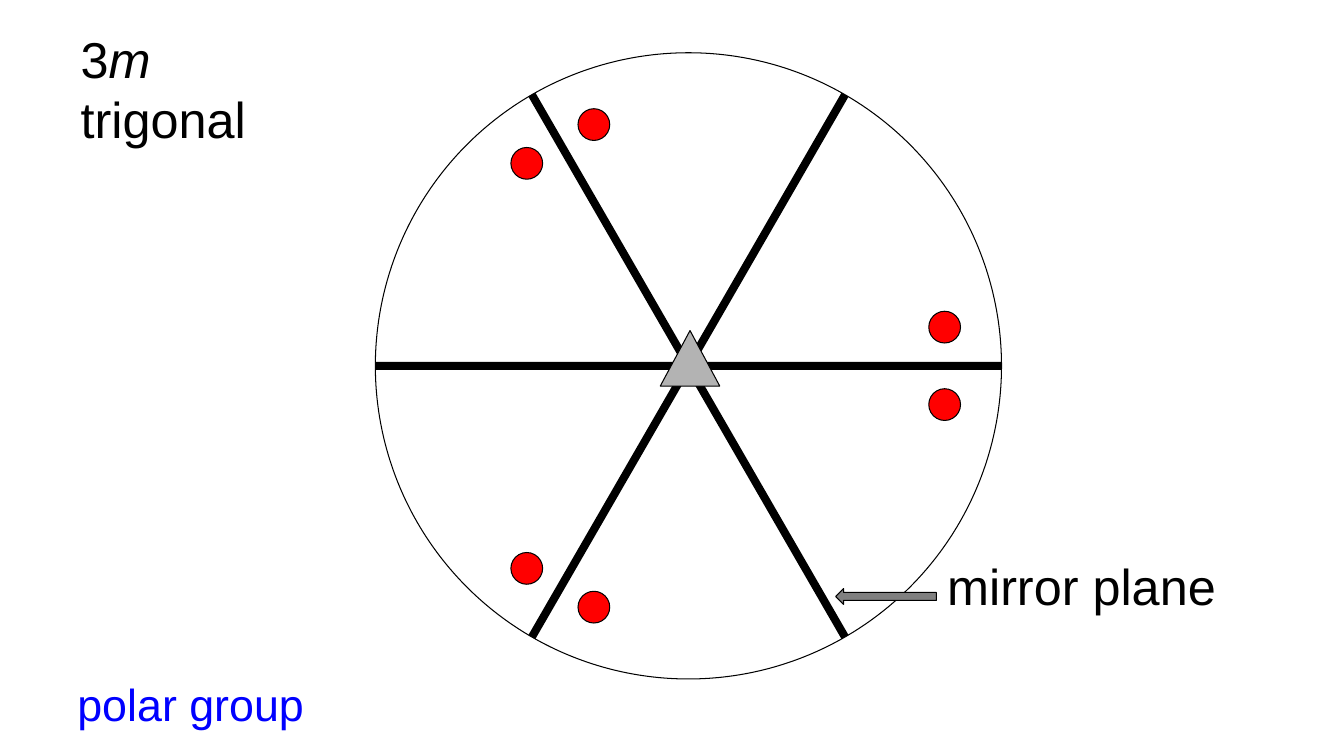
from math import cos, radians, sin

from lxml.etree import SubElement
from pptx import Presentation
from pptx.dml.color import RGBColor
from pptx.enum.shapes import MSO_CONNECTOR, MSO_SHAPE
from pptx.enum.text import MSO_ANCHOR, MSO_AUTO_SIZE, PP_ALIGN
from pptx.oxml.ns import qn
from pptx.util import Cm, Pt

COLORS = {
    "black": "000000",
    "white": "FFFFFF",
    "blue": "0000FF",
    "red": "FF0000",
    "light": "B3B3B3",
    "gray": "808080",
}
MID_X, MID_Y = 17.35, 9.22
RADIUS = 7.89
DOT_RING = 6.53
DOT_SIZE = 0.8
DOT_TILT = 8.6


def color(name):
    return RGBColor.from_string(COLORS[name])


def polar(radius, angle):
    """Return the point at an angle, counted anticlockwise from the right."""
    turn = radians(angle)
    return MID_X + radius * cos(turn), MID_Y - radius * sin(turn)


def write(box, lines, size, tint):
    """Fill a box with lines, each a list of (text, italic) runs."""
    frame = box.text_frame
    frame.word_wrap = False
    frame.auto_size = MSO_AUTO_SIZE.NONE
    frame.vertical_anchor = MSO_ANCHOR.TOP
    for index, line in enumerate(lines):
        para = frame.add_paragraph() if index else frame.paragraphs[0]
        para.alignment = PP_ALIGN.LEFT
        for text, italic in line:
            run = para.add_run()
            run.text = text
            font = run.font
            font.name = "Arial"
            font.size = Pt(size)
            font.italic = italic
            font.color.rgb = color(tint)


def add_title(slide, lines):
    title = slide.shapes.title
    title.left, title.top = Cm(1.78), Cm(0.58)
    title.width, title.height = Cm(4.72), Cm(3.33)
    write(title, lines, 36, "black")


def add_label(slide, text, left, top, width, height, size, tint):
    box = slide.shapes.add_textbox(Cm(left), Cm(top), Cm(width), Cm(height))
    write(box, [[(text, False)]], size, tint)


def add_shape(slide, kind, left, top, width, height, fill=None):
    shape = slide.shapes.add_shape(
        kind, Cm(left), Cm(top), Cm(width), Cm(height))
    shape.shadow.inherit = False
    shape.line.color.rgb = color("black")
    shape.line.width = Pt(0.75)
    if fill:
        shape.fill.solid()
        shape.fill.fore_color.rgb = color(fill)
    else:
        shape.fill.background()


def add_disc(slide, x, y, size, fill=None):
    """Add a circle around its centre."""
    add_shape(slide, MSO_SHAPE.OVAL, x - size / 2, y - size / 2,
              size, size, fill)


def add_plane(slide, angle):
    """Add a mirror plane as a diameter of the circle."""
    x1, y1 = polar(RADIUS, angle + 180)
    x2, y2 = polar(RADIUS, angle)
    plane = slide.shapes.add_connector(
        MSO_CONNECTOR.STRAIGHT, Cm(x1), Cm(y1), Cm(x2), Cm(y2))
    plane.line.color.rgb = color("black")
    plane.line.width = Pt(5.75)
    SubElement(plane._element.spPr, qn("a:effectLst"))


def main():
    deck = Presentation()
    deck.slide_width, deck.slide_height = Cm(33.87), Cm(19.05)
    slide = deck.slides.add_slide(deck.slide_layouts[5])
    slide.background.fill.solid()
    slide.background.fill.fore_color.rgb = color("white")

    add_title(slide, [[("3", False), ("m", True)], [("trigonal", False)]])
    add_label(slide, "polar group", 1.7, 16.92, 6.27, 1.63, 32, "blue")

    add_disc(slide, MID_X, MID_Y, 2 * RADIUS)
    for angle in (0, 60, 120):
        add_plane(slide, angle)
    add_shape(slide, MSO_SHAPE.ISOSCELES_TRIANGLE,
              16.64, 8.33, 1.5, 1.4, "light")
    for angle in (0, 120, 240):
        for tilt in (-DOT_TILT, DOT_TILT):
            x, y = polar(DOT_RING, angle + tilt)
            add_disc(slide, x, y, DOT_SIZE, "red")

    add_label(slide, "mirror plane", 23.62, 13.87, 7.34, 1.8, 36, "black")
    add_shape(slide, MSO_SHAPE.LEFT_ARROW, 21.06, 14.83, 2.54, 0.4, "gray")
    deck.save("out.pptx")


if __name__ == "__main__":
    main()
